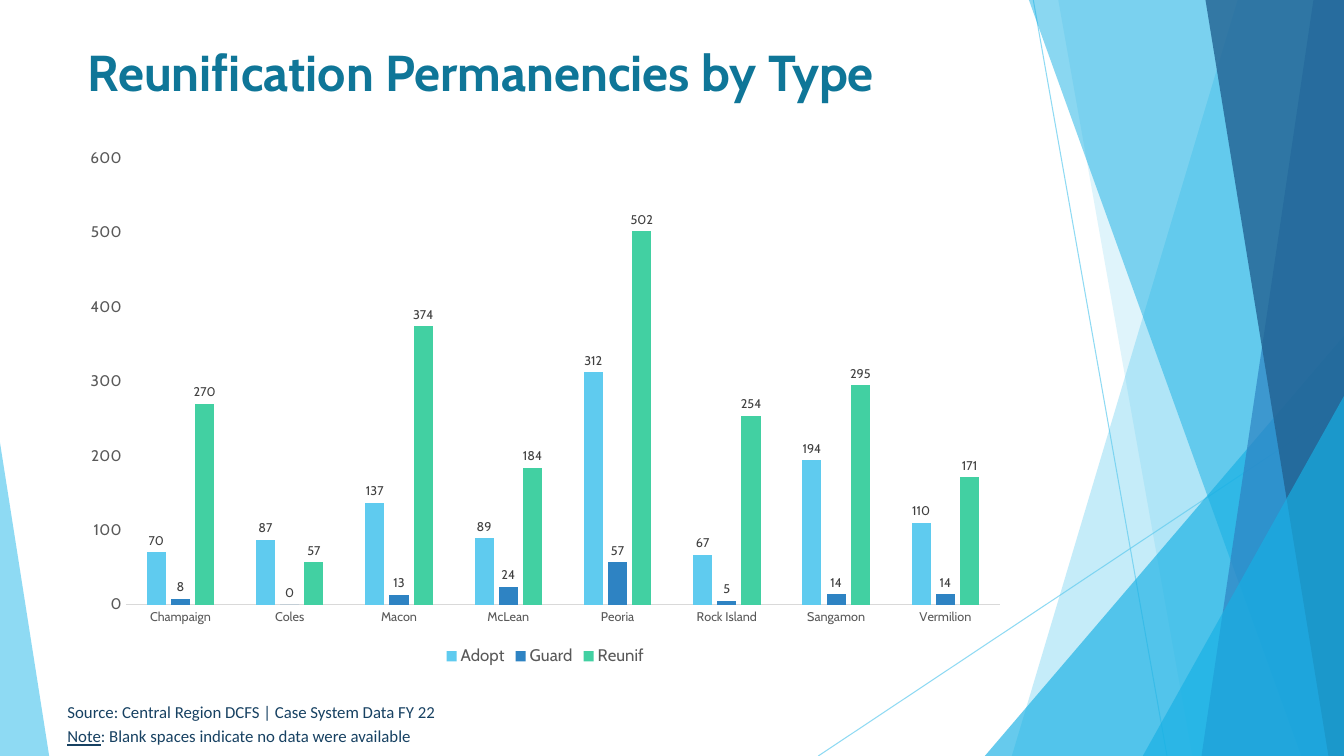
import pptx
import pptx.chart.data
import pptx.dml.color
import pptx.enum.chart
import pptx.enum.shapes
import pptx.enum.text
import pptx.oxml
import pptx.oxml.ns
import pptx.util
from pptx.util import Cm

RGBColor = pptx.dml.color.RGBColor
SKY = RGBColor(0x5F, 0xCB, 0xEF)
CYAN = RGBColor(0x17, 0xB0, 0xE4)
BLUE = RGBColor(0x2E, 0x83, 0xC3)
DEEP_BLUE = RGBColor(0x22, 0x62, 0x92)
GREEN = RGBColor(0x42, 0xD0, 0xA2)
TEAL = RGBColor(0x0F, 0x76, 0x98)
NAVY = RGBColor(0x17, 0x41, 0x62)
DARK_GREY = RGBColor(0x40, 0x40, 0x40)
GREY = RGBColor(0x59, 0x59, 0x59)
LIGHT_GREY = RGBColor(0xD9, 0xD9, 0xD9)

WIDTH, HEIGHT = 33.87, 19.05
COUNTIES = ["Champaign", "Coles", "Macon", "McLean", "Peoria", "Rock Island", "Sangamon", "Vermilion"]
PERMANENCIES = [
    ("Adopt", SKY, [70, 87, 137, 89, 312, 67, 194, 110]),
    ("Guard", BLUE, [8, 0, 13, 24, 57, 5, 14, 14]),
    ("Reunif", GREEN, [270, 57, 374, 184, 502, 254, 295, 171]),
]


class SlideBuilder:
    heading_font = "Cabin"
    note_font = "Calibri"

    def __init__(self, page):
        self.page = page
        self.shapes = page.shapes

    def style_font(self, font, size, color, name=heading_font, bold=False):
        font.name = name
        font.size = pptx.util.Pt(size)
        font.bold = bold
        font.color.rgb = color

    def set_opacity(self, element, percent):
        color = element.find(".//" + pptx.oxml.ns.qn("a:srgbClr"))
        alpha = pptx.oxml.parse_xml(f'<a:alpha {pptx.oxml.ns.nsdecls("a")} val="{percent * 1000}"/>')
        color.append(alpha)

    def paint(self, shape, color, opacity):
        shape.shadow.inherit = False
        shape.fill.solid()
        shape.fill.fore_color.rgb = color
        shape.line.fill.background()
        self.set_opacity(shape._element.spPr, opacity)

    def line(self, start, end):
        left, top, right, bottom = map(Cm, start + end)
        connector = self.shapes.add_connector(
            pptx.enum.shapes.MSO_CONNECTOR.STRAIGHT, left, top, right, bottom)
        connector.line.color.rgb = SKY
        connector.line.width = pptx.util.Pt(0.75)
        properties = connector._element.spPr
        self.set_opacity(properties, 70)
        properties.append(pptx.oxml.parse_xml(f'<a:effectLst {pptx.oxml.ns.nsdecls("a")}/>'))

    def panel(self, top_x, bottom_x, color, opacity):
        builder = self.shapes.build_freeform(Cm(top_x), Cm(0))
        corners = [(WIDTH, 0), (WIDTH, HEIGHT), (bottom_x, HEIGHT)]
        builder.add_line_segments([(Cm(x), Cm(y)) for x, y in corners])
        self.paint(builder.convert_to_shape(), color, opacity)

    def triangle(self, left, top, width, apex, color, opacity):
        shape = self.shapes.add_shape(
            pptx.enum.shapes.MSO_SHAPE.ISOSCELES_TRIANGLE,
            Cm(left), Cm(top), Cm(width), Cm(HEIGHT - top))
        shape.adjustments[0] = apex
        self.paint(shape, color, opacity)

    def text(self, left, top, width, height, lines, size, color, name, bold=False,
             anchor=pptx.enum.text.MSO_ANCHOR.TOP):
        box = self.shapes.add_textbox(Cm(left), Cm(top), Cm(width), Cm(height))
        frame = box.text_frame
        frame.word_wrap = True
        frame.vertical_anchor = anchor
        for index, spans in enumerate(lines):
            para = frame.paragraphs[0] if index == 0 else frame.add_paragraph()
            self.style_font(para.font, size, color, name, bold)
            if index < len(lines) - 1:
                para.space_after = pptx.util.Pt(3)
            for words, underlined in spans:
                span = para.add_run()
                span.text = words
                if underlined:
                    span.font.underline = True

    def column_chart(self, left, top, width, height, categories, series_rows):
        data = pptx.chart.data.CategoryChartData(number_format="0")
        data.categories = categories
        for name, color, values in series_rows:
            data.add_series(name, values)
        chart = self.shapes.add_chart(
            pptx.enum.chart.XL_CHART_TYPE.COLUMN_CLUSTERED,
            Cm(left), Cm(top), Cm(width), Cm(height), data).chart
        self.style_font(chart.font, 10, GREY)
        chart.has_title = False
        chart.has_legend = True
        chart.legend.position = pptx.enum.chart.XL_LEGEND_POSITION.BOTTOM
        chart.legend.include_in_layout = False
        self.style_font(chart.legend.font, 12, GREY)

        for axis, size in ((chart.category_axis, 9), (chart.value_axis, 11)):
            axis.has_major_gridlines = False
            axis.major_tick_mark = pptx.enum.chart.XL_TICK_MARK.NONE
            axis.minor_tick_mark = pptx.enum.chart.XL_TICK_MARK.NONE
            self.style_font(axis.tick_labels.font, size, GREY)
        chart.category_axis.format.line.color.rgb = LIGHT_GREY
        chart.category_axis.format.line.width = pptx.util.Pt(0.75)
        chart.value_axis.format.line.fill.background()
        chart.value_axis.minimum_scale = 0
        chart.value_axis.maximum_scale = 600
        chart.value_axis.major_unit = 100

        plot = chart.plots[0]
        plot.gap_width = 219
        plot.overlap = -27
        plot.vary_by_categories = False
        for series, (name, color, values) in zip(plot.series, series_rows):
            series.invert_if_negative = False
            series.format.fill.solid()
            series.format.fill.fore_color.rgb = color
            labels = series.data_labels
            labels.show_value = True
            labels.number_format = "0"
            labels.number_format_is_linked = False
            labels.position = pptx.enum.chart.XL_LABEL_POSITION.OUTSIDE_END
            self.style_font(labels.font, 9, DARK_GREY)


def main():
    deck = pptx.Presentation()
    deck.slide_width, deck.slide_height = Cm(WIDTH), Cm(HEIGHT)
    slide = SlideBuilder(deck.slides.add_slide(deck.slide_layouts[6]))

    slide.line((26.04, 0), (29.41, HEIGHT))
    slide.line((WIDTH, 10.24), (20.62, HEIGHT))
    slide.panel(31.19, 25.5, SKY, 36)
    slide.panel(26.67, 30.05, SKY, 20)
    slide.triangle(24.82, 8.46, 9.05, 1, CYAN, 66)
    slide.panel(25.93, 32.79, CYAN, 50)
    slide.panel(33.1, 30.28, BLUE, 70)
    slide.panel(30.38, 33.48, DEEP_BLUE, 80)
    slide.triangle(28.8, 9.98, 5.07, 1, CYAN, 66)
    slide.triangle(0, 11.15, 1.24, 0, SKY, 70)

    slide.text(1.96, 1.07, 23.88, 1.47, [[("Reunification Permanencies by Type", False)]],
               36, TEAL, slide.heading_font, True, pptx.enum.text.MSO_ANCHOR.MIDDLE)
    slide.column_chart(1.8, 3.48, 23.88, 13.41, COUNTIES, PERMANENCIES)
    slide.text(1.45, 17.56, 11.28, 1.4, [
        [("Source: Central Region DCFS | Case System Data FY 22", False)],
        [("Note", True), (": Blank spaces indicate no data were available", False)],
    ], 12, NAVY, slide.note_font)
    deck.save("out.pptx")


if __name__ == "__main__":
    main()
